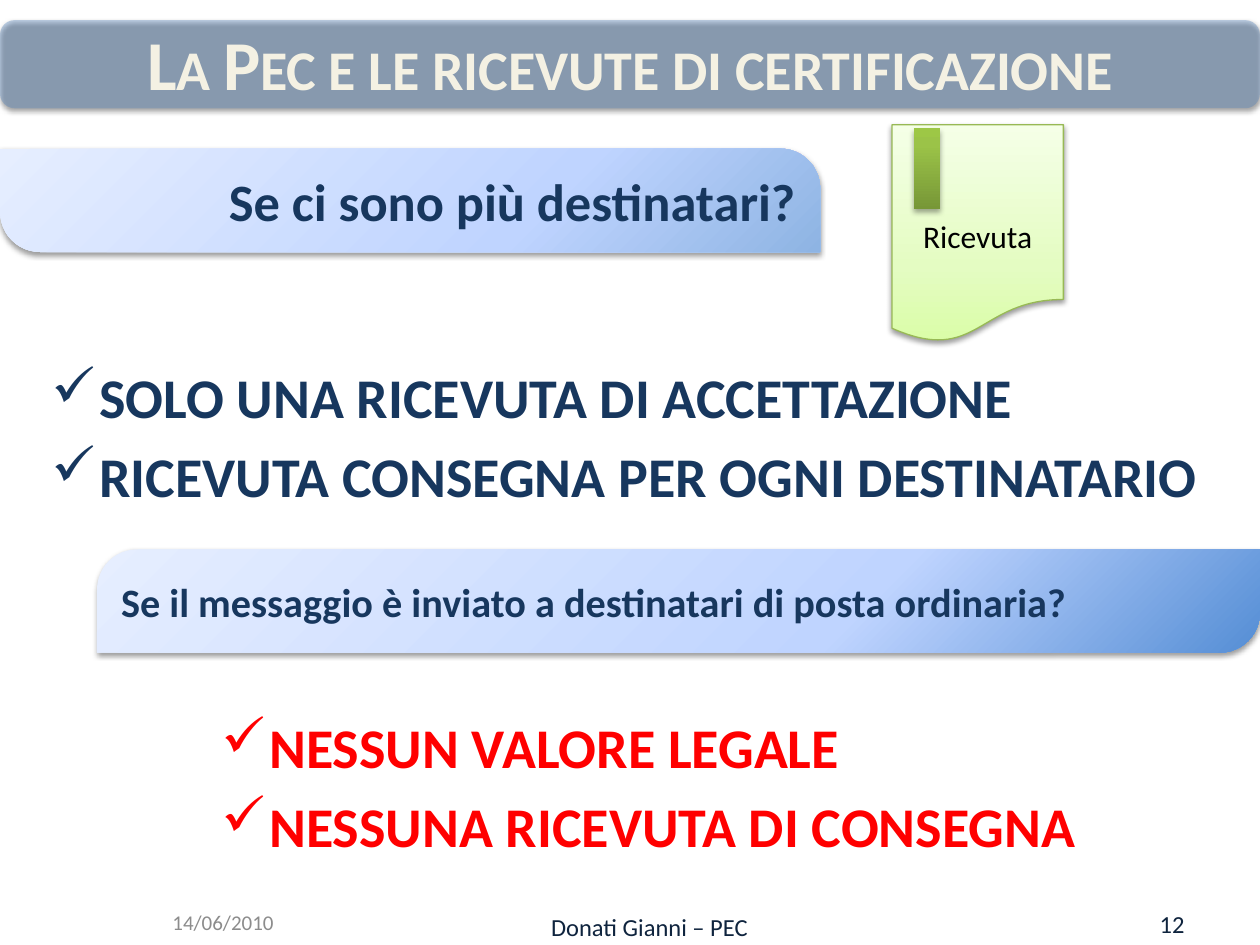
from lxml import etree
from pptx import Presentation
from pptx import util as u
from pptx.dml.color import RGBColor
from pptx.enum import shapes, text
from pptx.oxml import ns

FONT = "Calibri"
NAVY, INK, RED = "17375E", "0F243E", "FF0000"
SHAPE = shapes.MSO_SHAPE
LEFT, CENTER, RIGHT = text.PP_ALIGN.LEFT, text.PP_ALIGN.CENTER, text.PP_ALIGN.RIGHT
TOP, MIDDLE = text.MSO_ANCHOR.TOP, text.MSO_ANCHOR.MIDDLE


def color(value):
    return RGBColor.from_string(value)


def add_xml(parent, tag, **attributes):
    return etree.SubElement(parent, ns.qn(tag), attributes)


class Page:
    def __init__(self, deck):
        self.slide = deck.slides.add_slide(deck.slide_layouts[6])

    def shape(self, kind, at, fill, opacity=100, line=None, shadow=(38, 1.6)):
        """Add a preset shape with a plain fill, a thin line and a soft shadow."""
        shape = self.slide.shapes.add_shape(kind, *map(u.Inches, at))
        shape.fill.solid()
        shape.fill.fore_color.rgb = color(fill)
        if opacity < 100:
            swatch = shape._element.spPr.find(".//" + ns.qn("a:srgbClr"))
            add_xml(swatch, "a:alpha", val=str(opacity * 1000))
        if line:
            shape.line.color.rgb = color(line)
            shape.line.width = u.Pt(0.75)
        else:
            shape.line.fill.background()
        shape.shadow.inherit = False
        strength, distance = shadow
        effects = shape._element.spPr.find(ns.qn("a:effectLst"))
        outer = add_xml(effects, "a:outerShdw", blurRad=str(u.Pt(3.1)),
                        dist=str(u.Pt(distance)), dir="5400000", rotWithShape="0")
        black = add_xml(outer, "a:srgbClr", val="000000")
        add_xml(black, "a:alpha", val=str(strength * 1000))
        return shape

    def gradient(self, shape, stops, circular=False):
        """Swap the plain fill for a gradient, upward or from the lower right corner."""
        plain = shape._element.spPr.find(ns.qn("a:solidFill"))
        fill = etree.Element(ns.qn("a:gradFill"), rotWithShape="1")
        stop_list = add_xml(fill, "a:gsLst")
        for position, value in stops:
            stop = add_xml(stop_list, "a:gs", pos=str(position * 1000))
            add_xml(stop, "a:srgbClr", val=value)
        if circular:
            circle = add_xml(fill, "a:path", path="circle")
            add_xml(circle, "a:fillToRect", l="100000", t="100000")
        else:
            add_xml(fill, "a:lin", ang="16200000", scaled="1")
        plain.getparent().replace(plain, fill)

    def set_text(self, shape, lines, size, ink, align=LEFT, anchor=MIDDLE,
                 bold=False, bullet=None):
        frame = shape.text_frame
        frame.word_wrap = True
        frame.vertical_anchor = anchor
        frame.text = "\n".join(lines)
        for number, para in enumerate(frame.paragraphs):
            para.alignment = align
            if number:
                para.space_before = u.Pt(size * 0.2)
            if bullet:
                props = para._p.get_or_add_pPr()
                indent = u.Inches(0.38)
                props.set("marL", str(indent))
                props.set("indent", str(-indent))
                add_xml(props, "a:buChar", char=bullet)
            for span in para.runs:
                span.font.name = FONT
                span.font.size = u.Pt(size)
                span.font.bold = bold
                span.font.color.rgb = color(ink)
        return frame

    def label(self, at, lines, size, ink, **style):
        box = self.slide.shapes.add_textbox(*map(u.Inches, at))
        return self.set_text(box, lines, size, ink, **style)

    def banner(self, at, corners, deep, words, size, align):
        banner = self.shape(SHAPE.ROUND_2_DIAG_RECTANGLE, at, deep)
        banner.adjustments[0], banner.adjustments[1] = corners
        self.gradient(banner, [(0, deep), (35, "BFD4FF"), (100, "E6EEFF")], circular=True)
        self.set_text(banner, [words], size, NAVY, align=align, bold=True)

    def checklist(self, at, lines, ink):
        self.label(at, lines, 32, ink, anchor=TOP, bold=True, bullet="✓")


def main():
    deck = Presentation()
    deck.slide_width, deck.slide_height = u.Inches(10), u.Inches(7.5)
    page = Page(deck)

    # Title bar
    page.shape(SHAPE.ROUNDED_RECTANGLE, (0, 0.16, 10, 0.7), "4F81BD",
               opacity=35, shadow=(35, 1.8))
    title = page.label((0, 0.16, 10, 0.68), ["La Pec e le ricevute di certificazione"],
                       40, "F4F1E3", align=CENTER, bold=True)
    title.paragraphs[0].runs[0]._r.get_or_add_rPr().set("cap", "small")

    # Footer
    page.label((7.17, 7.17, 2.33, 0.32), ["12"], 14, INK, align=RIGHT)
    page.label((3.57, 7.19, 3.17, 0.31), ["Donati Gianni – PEC"], 14, INK,
               align=CENTER, anchor=TOP)
    page.label((1.27, 7.14, 2.33, 0.36), ["14/06/2010"], 12, "8C8C8C")

    # Receipt with its marker
    receipt = page.shape(SHAPE.FLOWCHART_DOCUMENT, (7.08, 0.99, 1.36, 1.73), "E4FCC2",
                         line="98B955")
    page.gradient(receipt, [(0, "DAFDA7"), (35, "E4FCC2"), (100, "F5FFE7")])
    frame = page.set_text(receipt, ["Ricevuta"], 18, "000000", align=CENTER)
    frame.margin_top = u.Inches(0.42)
    marker = page.shape(SHAPE.RECTANGLE, (7.25, 1.02, 0.21, 0.64), "9BC348",
                        shadow=(35, 1.8))
    page.gradient(marker, [(0, "779737"), (80, "9BC348"), (100, "9DC746")])

    # Questions and answers
    page.banner((0, 1.18, 6.51, 0.82), (0, 0.388), "8EB4E3",
                "Se ci sono più destinatari?", 30, RIGHT)
    page.checklist((0.31, 2.83, 9.56, 1.4),
                   ["SOLO UNA RICEVUTA DI ACCETTAZIONE",
                    "RICEVUTA CONSEGNA PER OGNI DESTINATARIO"], NAVY)
    page.banner((0.77, 4.36, 9.23, 0.82), (0.388, 0), "558ED5",
                "Se il messaggio è inviato a destinatari di posta ordinaria?", 23, LEFT)
    page.checklist((1.66, 5.61, 7.83, 1.4),
                   ["NESSUN VALORE LEGALE", "NESSUNA RICEVUTA DI CONSEGNA"], RED)

    deck.save("out.pptx")


if __name__ == "__main__":
    main()
